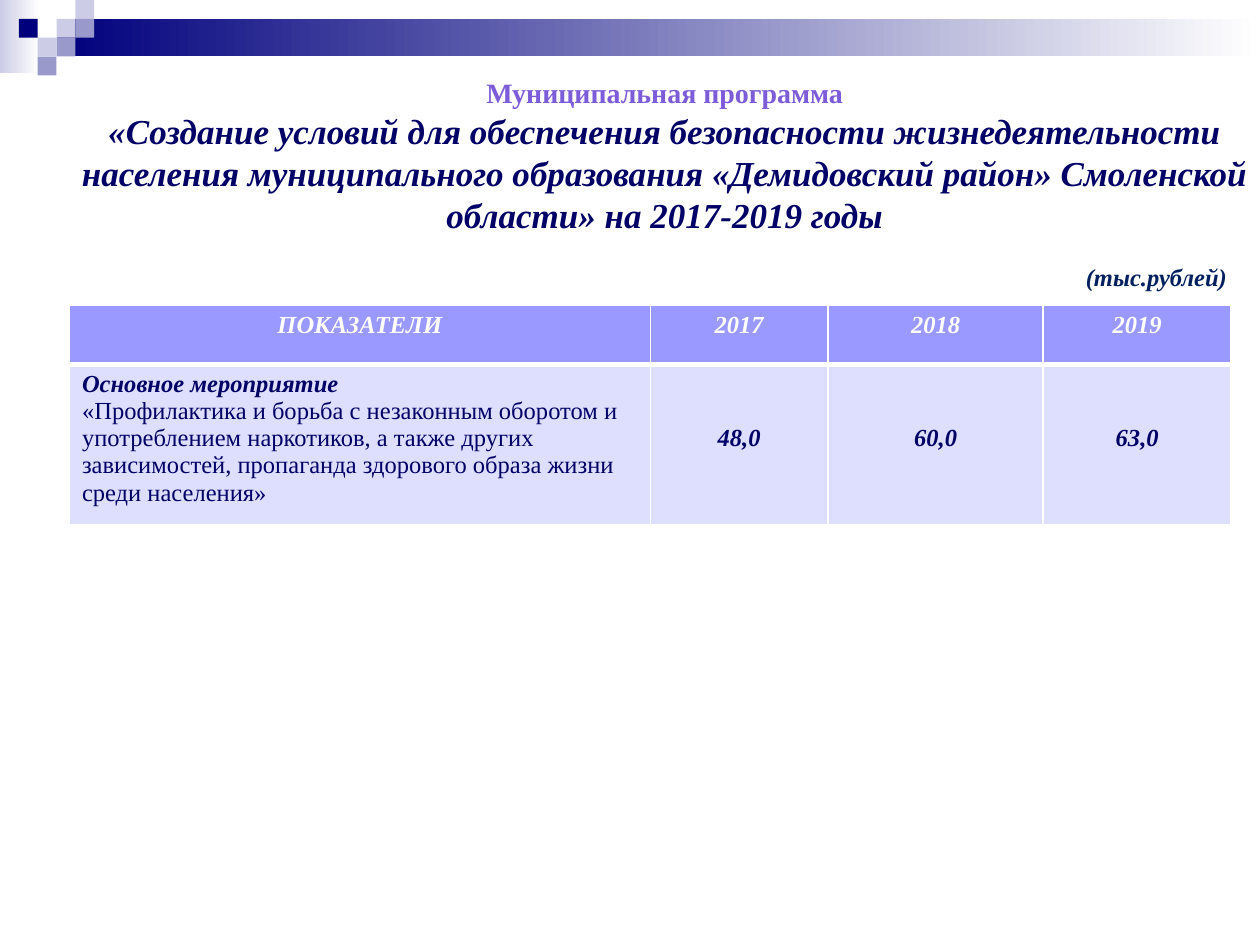
from lxml.etree import SubElement
from pptx import Presentation
from pptx.dml.color import RGBColor
from pptx.enum.shapes import MSO_SHAPE
from pptx.enum.text import PP_ALIGN
from pptx.oxml.ns import qn
from pptx.util import Cm, Pt

# Content
FONT = "Times New Roman"
NAVY, WHITE = "000066", "FFFFFF"
BARS = [  # left, top, width, height, first colour (fades to white)
    (0, 0, 0.79, 1.47, "CCCCE6"),
    (1.14, 0.38, 24.26, 0.76, "00007D"),
]
STEP = 0.38
TILES = [  # column, row, colour
    (3, 1, "CCCCE6"), (4, 0, "CCCCE6"), (4, 1, "9999CC"), (2, 2, "CCCCE6"),
    (1, 1, "00007D"), (3, 2, "9999CC"), (2, 3, "9999CC"),
]
TITLE = [
    ("Муниципальная программа", dict(size=Pt(16), bold=True), "7D5CDA"),
    ("«Создание условий для обеспечения безопасности жизнедеятельности "
     "населения муниципального образования «Демидовский район» Смоленской "
     "области» на 2017-2019 годы",
     dict(size=Pt(20), bold=True, italic=True), NAVY),
]
BOLD = dict(size=Pt(14), bold=True, italic=True)
PLAIN = dict(size=Pt(14), bold=False, italic=False)
UNIT = [("(тыс.рублей)", BOLD, "002060")]
HEAD = ["ПОКАЗАТЕЛИ", "2017", "2018", "2019"]
TASK = [
    ("Основное мероприятие", BOLD, NAVY),
    ("«Профилактика и борьба с незаконным оборотом и употреблением "
     "наркотиков, а также других зависимостей, пропаганда здорового образа "
     "жизни среди населения»", PLAIN, NAVY),
]
SUMS = ["48,0", "60,0", "63,0"]
COLS = [11.71, 3.58, 4.34, 3.79]
ROWS = [1.2, 3.17]


def tint(code):
    return RGBColor.from_string(code)


def write(frame, lines, align):
    for i, (text, form, color) in enumerate(lines):
        para = frame.paragraphs[0] if i == 0 else frame.add_paragraph()
        para.alignment = align
        run = para.add_run()
        run.text = text
        run.font.name = FONT
        run.font.color.rgb = tint(color)
        for key, val in form.items():
            setattr(run.font, key, val)


def block(slide, x, y, w, h, color, fade=False):
    box = slide.shapes.add_shape(
        MSO_SHAPE.RECTANGLE, Cm(x), Cm(y), Cm(w), Cm(h))
    box.shadow.inherit = False
    box.line.fill.background()
    if fade:
        box.fill.gradient()
        box.fill.gradient_angle = 0
        for stop, code in zip(box.fill.gradient_stops, (color, WHITE)):
            stop.color.rgb = tint(code)
    else:
        box.fill.solid()
        box.fill.fore_color.rgb = tint(color)


def label(slide, x, y, w, h, lines, align, wrap):
    frame = slide.shapes.add_textbox(Cm(x), Cm(y), Cm(w), Cm(h)).text_frame
    frame.word_wrap = wrap
    write(frame, lines, align)
    return frame


def edge(cell, widths):
    props = cell._tc.get_or_add_tcPr()
    for side, width in widths.items():
        line = SubElement(props, qn("a:ln" + side), w=str(Pt(width)))
        fill = SubElement(line, qn("a:solidFill"))
        SubElement(fill, qn("a:srgbClr"), val=WHITE)


def main():
    deck = Presentation()
    deck.slide_width, deck.slide_height = Cm(25.4), Cm(19.05)
    slide = deck.slides.add_slide(deck.slide_layouts[6])

    # Top band and tiles
    for bar in BARS:
        block(slide, *bar, fade=True)
    for col, row, color in TILES:
        block(slide, col * STEP, row * STEP, STEP, STEP, color)

    # Title
    frame = label(slide, 1.4, 1.4, 24, 3.5, TITLE, PP_ALIGN.CENTER, True)
    frame.margin_left = frame.margin_right = Cm(0.2)
    frame.paragraphs[1].line_spacing = Pt(24)

    # Table
    table = slide.shapes.add_table(
        2, len(COLS), Cm(1.4), Cm(6.15), Cm(sum(COLS)), Cm(sum(ROWS))).table
    for col, width in zip(table.columns, COLS):
        col.width = Cm(width)
    for row, height in zip(table.rows, ROWS):
        row.height = Cm(height)
    for i, head in enumerate(HEAD):
        top, low = table.cell(0, i), table.cell(1, i)
        write(top.text_frame, [(head, BOLD, WHITE)], PP_ALIGN.CENTER)
        if i == 0:
            write(low.text_frame, TASK, PP_ALIGN.LEFT)
        else:
            write(low.text_frame, [(SUMS[i - 1], BOLD, NAVY)], PP_ALIGN.CENTER)
            low.margin_top = Cm(1.21)
        edge(top, dict(L=1, R=1, T=1, B=3))
        edge(low, dict(L=1, R=1, T=3, B=1))
        for cell, color in ((top, "9999FF"), (low, "DEDEFF")):
            cell.fill.solid()
            cell.fill.fore_color.rgb = tint(color)

    # Unit note
    label(slide, 21.64, 5.16, 3.38, 0.86, UNIT, PP_ALIGN.LEFT, False)
    deck.save("out.pptx")


if __name__ == "__main__":
    main()
